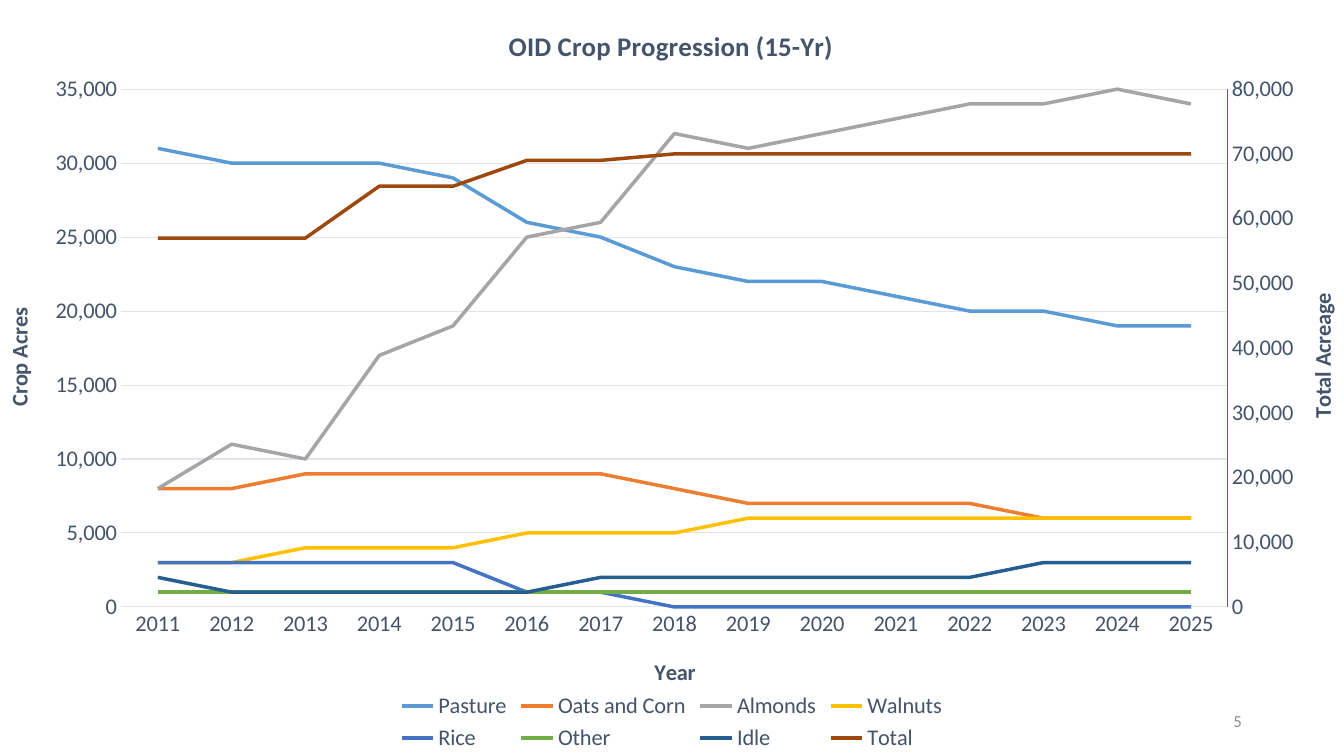
from copy import deepcopy

from pptx import Presentation
from pptx import util as u
from pptx.chart.axis import ValueAxis
from pptx.chart.data import CategoryChartData
from pptx.dml.color import RGBColor
from pptx.enum import chart as ch, text
from pptx.oxml import parse_xml
from pptx.oxml.ns import nsdecls, qn

FONT = "Calibri"
COLORS = {
    "label": "44546A", "grid": "E0E5EB", "right axis": "806000", "number": "8C8C8C",
    "Pasture": "5B9BD5", "Oats and Corn": "ED7D31", "Almonds": "A5A5A5",
    "Walnuts": "FFC000", "Rice": "4472C4", "Other": "70AD47",
    "Idle": "255E91", "Total": "9E480E",
}
YEARS = range(2011, 2026)
THOUSAND_ACRES = {
    "Pasture": [31, 30, 30, 30, 29, 26, 25, 23, 22, 22, 21, 20, 20, 19, 19],
    "Oats and Corn": [8, 8, 9, 9, 9, 9, 9, 8, 7, 7, 7, 7, 6, 6, 6],
    "Almonds": [8, 11, 10, 17, 19, 25, 26, 32, 31, 32, 33, 34, 34, 35, 34],
    "Walnuts": [3, 3, 4, 4, 4, 5, 5, 5, 6, 6, 6, 6, 6, 6, 6],
    "Rice": [3, 3, 3, 3, 3, 1, 1, 0, 0, 0, 0, 0, 0, 0, 0],
    "Other": [1] * len(YEARS),
    "Idle": [2, 1, 1, 1, 1, 1, 2, 2, 2, 2, 2, 2, 3, 3, 3],
    "Total": [57, 57, 57, 65, 65, 69, 69, 70, 70, 70, 70, 70, 70, 70, 70],
}


def rgb(name):
    return RGBColor.from_string(COLORS[name])


def set_font(font, size, color, bold=False):
    font.name, font.size, font.bold = FONT, u.Pt(size), bold
    font.color.rgb = rgb(color)


def set_line(line, color, width):
    line.color.rgb = rgb(color)
    line.width = u.Pt(width)


def layout(x, y, w=None, h=None):
    """Manual chart layout, in percent of the chart area."""
    target = '<c:layoutTarget val="inner"/>' if w else ""
    size = f'<c:w val="{w / 100}"/><c:h val="{h / 100}"/>' if w else ""
    return parse_xml(
        f'<c:layout {nsdecls("c")}><c:manualLayout>{target}'
        '<c:xMode val="edge"/><c:yMode val="edge"/>'
        f'<c:x val="{x / 100}"/><c:y val="{y / 100}"/>{size}'
        '</c:manualLayout></c:layout>')


def set_title(title, words, size, x, y):
    """Write a chart or axis title with its top left corner at x, y percent."""
    p = title.text_frame.paragraphs[0]
    p.text = words
    set_font(p.font, size, "label", bold=True)
    el = title._element
    for old in el.findall(qn("c:layout")):
        el.remove(old)
    el.find(qn("c:tx")).addnext(layout(x, y))


def style_axis(axis, words, x, y):
    axis.major_tick_mark = axis.minor_tick_mark = ch.XL_TICK_MARK.NONE
    set_font(axis.tick_labels.font, 16, "label")
    set_title(axis.axis_title, words, 16, x, y)


def style_value_axis(axis, words, top, step, x, y):
    axis.minimum_scale, axis.maximum_scale, axis.major_unit = 0, top, step
    axis.tick_labels.number_format = "#,##0"
    axis.tick_labels.number_format_is_linked = False
    style_axis(axis, words, x, y)


def move_last_series_right(chart):
    """Plot the last series on its own pair of axes and return the right one."""
    area = chart._chartSpace.chart.plotArea
    left = area.find(qn("c:lineChart"))
    cat, val = area.find(qn("c:catAx")), area.find(qn("c:valAx"))
    right, cat2, val2 = deepcopy(left), deepcopy(cat), deepcopy(val)
    left.remove(left.findall(qn("c:ser"))[-1])
    for ser in right.findall(qn("c:ser"))[:-1]:
        right.remove(ser)
    left.addnext(right)
    val.addnext(val2)
    val2.addnext(cat2)

    cat_id, val_id = "50010", "50020"
    for ref, new in zip(right.findall(qn("c:axId")), (cat_id, val_id)):
        ref.set("val", new)
    for ax, own, other in ((cat2, cat_id, val_id), (val2, val_id, cat_id)):
        ax.find(qn("c:axId")).set("val", own)
        ax.find(qn("c:crossAx")).set("val", other)
    cat2.find(qn("c:delete")).set("val", "1")
    val2.find(qn("c:axPos")).set("val", "r")
    val2.find(qn("c:crosses")).set("val", "max")
    return ValueAxis(val2)


def add_crop_chart(slide, width, height):
    data = CategoryChartData(number_format="#,##0")
    data.categories = [str(year) for year in YEARS]
    for crop, thousands in THOUSAND_ACRES.items():
        data.add_series(crop, [1000 * n for n in thousands])
    chart = slide.shapes.add_chart(
        ch.XL_CHART_TYPE.LINE, 0, 0, width, height, data).chart
    chart.font.name, chart.font.size = FONT, u.Pt(16)
    chart.has_title = True
    set_title(chart.chart_title, "OID Crop Progression (15-Yr)", 19.2, 37.5, 3)

    chart.has_legend = True
    chart.legend.position = ch.XL_LEGEND_POSITION.BOTTOM
    chart.legend.include_in_layout = False
    set_font(chart.legend.font, 16, "label")

    chart.plots[0].vary_by_categories = False
    for s in chart.plots[0].series:
        s.smooth = False
        s.marker.style = ch.XL_MARKER_STYLE.NONE
        set_line(s.format.line, s.name, 2.5)

    years, acres = chart.category_axis, chart.value_axis
    total = move_last_series_right(chart)
    style_axis(years, "Year", 48.4, 86.3)
    set_line(years.format.line, "grid", 0.75)
    style_value_axis(acres, "Crop Acres", 35000, 5000, 0, 40.2)
    acres.format.line.fill.background()
    set_line(acres.major_gridlines.format.line, "grid", 0.75)
    style_value_axis(total, "Total Acreage", 80000, 10000, 97, 38.2)
    total.has_major_gridlines = False
    set_line(total.format.line, "right axis", 0.75)

    area = chart._chartSpace.chart.plotArea
    for old in area.findall(qn("c:layout")):
        area.remove(old)
    area.insert(0, layout(9, 11.8, 82.4, 68.5))


def add_slide_number(slide, number):
    box = slide.shapes.add_textbox(u.Cm(23.93), u.Cm(17.65), u.Cm(7.62), u.Cm(1.02))
    tf = box.text_frame
    tf.word_wrap = True
    tf.vertical_anchor = text.MSO_ANCHOR.MIDDLE
    p = tf.paragraphs[0]
    p.text = number
    p.alignment = text.PP_ALIGN.RIGHT
    set_font(p.font, 12, "number")


def main():
    prs = Presentation()
    prs.slide_width, prs.slide_height = u.Cm(33.87), u.Cm(19.05)
    slide = prs.slides.add_slide(prs.slide_layouts[6])
    add_slide_number(slide, "5")
    add_crop_chart(slide, prs.slide_width, prs.slide_height)
    prs.save("out.pptx")


if __name__ == "__main__":
    main()
